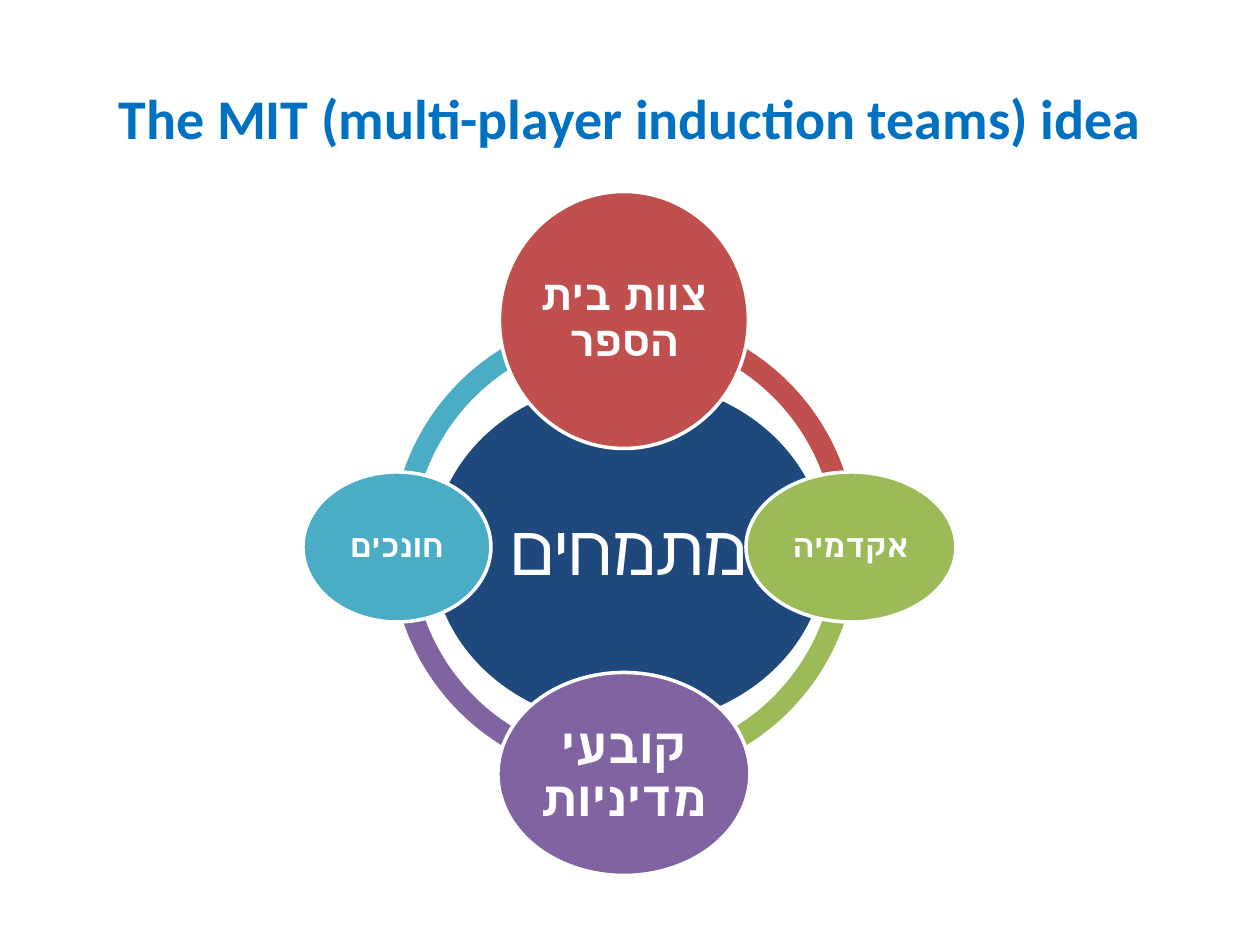
from dataclasses import dataclass

from pptx import Presentation
from pptx.dml.color import RGBColor
from pptx.enum.shapes import MSO_SHAPE
from pptx.enum.text import MSO_ANCHOR, PP_ALIGN
from pptx.util import Pt

ELLIPSE, ARC = MSO_SHAPE.OVAL, MSO_SHAPE.BLOCK_ARC
MIDDLE, CENTER = MSO_ANCHOR.MIDDLE, PP_ALIGN.CENTER


@dataclass(frozen=True)
class Theme:
    font: str = "Calibri"
    title: str = "0070C0"
    white: str = "FFFFFF"
    navy: str = "1F497D"
    red: str = "C0504D"
    green: str = "9BBB59"
    purple: str = "8064A2"
    teal: str = "4BACC6"
    title_size: int = 32
    core_size: int = 40
    large: int = 28
    medium: int = 24
    small: int = 18
    outline: int = 2


THEME = Theme()
EMU_PER_PX = 914400 / 126
PAGE_SIZE = (1260, 945)

TITLE = "The MIT (multi-player induction teams) idea"
TITLE_BOX = (63, 38, 1134, 158)

# Ring and satellites share one centre; the core sits slightly off it.
RING_CENTER = (624, 547)
RING_SIZE = 466
RING_THICKNESS = 0.046
ORBIT = 227
CORE = ("מתמחים", (629, 553), (397, 349), THEME.navy, THEME.core_size, 8)

# Clockwise from the top: text, direction, size, colour, type size, inset
PLAYERS = [
    ("צוות בית הספר", (0, -1), (249, 257), THEME.red, THEME.medium, 4),
    ("אקדמיה", (1, 0), (210, 150), THEME.green, THEME.small, 4),
    ("קובעי מדיניות", (0, 1), (252, 203), THEME.purple, THEME.large, 5),
    ("חונכים", (-1, 0), (188, 150), THEME.teal, THEME.small, 4),
]
# Start angles of the quarter arcs, in the preset's units (54 is 90 degrees)
QUARTER_STARTS = [162, 0, 54, 108]
QUARTER, FULL_TURN = 54, 216


def emu(*lengths):
    return [round(length * EMU_PER_PX) for length in lengths]


def centered(center, size):
    """Turn a centre and a size into left, top, width, height."""
    return (center[0] - size[0] / 2, center[1] - size[1] / 2, *size)


def set_all(target, values):
    for name, value in values.items():
        setattr(target, name, value)


def write(box, text, color, size, bold, inset=None, hebrew=False):
    frame = box.text_frame
    set_all(frame, {"word_wrap": True, "vertical_anchor": MIDDLE})
    if inset is not None:
        sides = ("left", "top", "right", "bottom")
        set_all(frame, {f"margin_{side}": emu(inset)[0] for side in sides})
    para = frame.paragraphs[0]
    para.alignment = CENTER
    if hebrew:
        para.line_spacing = 0.9
        para._p.get_or_add_pPr().set("rtl", "1")
    span = para.add_run()
    span.text = text
    set_all(span.font, {"name": THEME.font, "size": Pt(size), "bold": bold})
    span.font.color.rgb = RGBColor.from_string(color)


def add_filled(page, kind, place, color):
    shape = page.shapes.add_shape(kind, *emu(*place))
    shape.shadow.inherit = False
    shape.fill.solid()
    shape.fill.fore_color.rgb = RGBColor.from_string(color)
    shape.line.fill.background()
    return shape


def add_arc(page, start, color):
    place = centered(RING_CENTER, (RING_SIZE, RING_SIZE))
    arc = add_filled(page, ARC, place, color)
    values = (start, (start + QUARTER) % FULL_TURN, RING_THICKNESS)
    for index, value in enumerate(values):
        arc.adjustments[index] = value


def add_bubble(page, text, center, size, color, type_size, inset, bold=True):
    bubble = add_filled(page, ELLIPSE, centered(center, size), color)
    bubble.line.color.rgb = RGBColor.from_string(THEME.white)
    bubble.line.width = Pt(THEME.outline)
    write(bubble, text, THEME.white, type_size, bold, inset, hebrew=True)


def main():
    deck = Presentation()
    deck.slide_width, deck.slide_height = emu(*PAGE_SIZE)
    page = deck.slides.add_slide(deck.slide_layouts[6])

    title = page.shapes.add_textbox(*emu(*TITLE_BOX))
    write(title, TITLE, THEME.title, THEME.title_size, bold=True)

    for start, player in reversed(list(zip(QUARTER_STARTS, PLAYERS))):
        add_arc(page, start, player[3])
    add_bubble(page, *CORE, bold=False)
    for text, direction, *look in PLAYERS:
        center = [c + ORBIT * d for c, d in zip(RING_CENTER, direction)]
        add_bubble(page, text, center, *look)

    deck.save("out.pptx")


if __name__ == "__main__":
    main()
